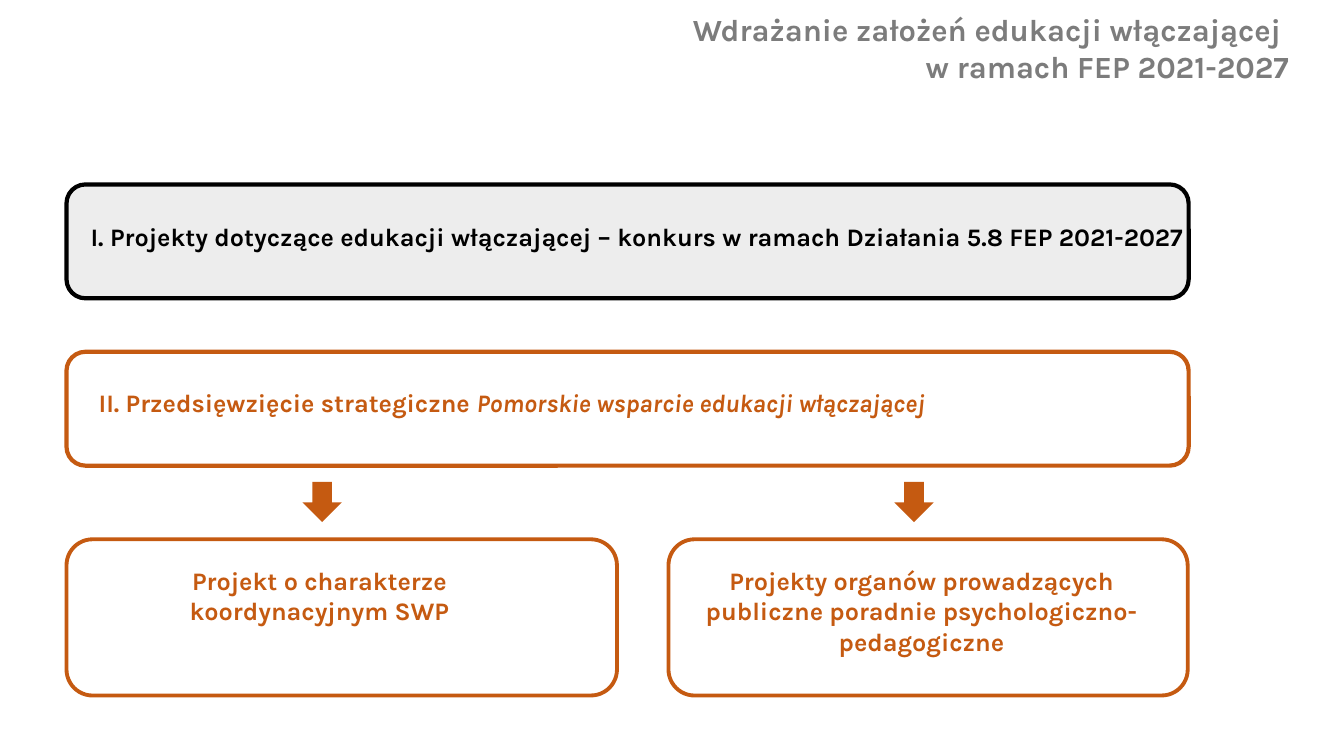
from pptx import Presentation
from pptx.dml.color import RGBColor
from pptx.enum.shapes import MSO_SHAPE
from pptx.enum.text import MSO_ANCHOR, PP_ALIGN
from pptx.util import Inches, Pt

ROUND, ARROW = MSO_SHAPE.ROUNDED_RECTANGLE, MSO_SHAPE.DOWN_ARROW
LEFT, CENTER, RIGHT = PP_ALIGN.LEFT, PP_ALIGN.CENTER, PP_ALIGN.RIGHT
TOP, MIDDLE = MSO_ANCHOR.TOP, MSO_ANCHOR.MIDDLE
ORANGE = RGBColor(0xC5, 0x5A, 0x11)
BLACK = RGBColor(0, 0, 0)
GRAY = RGBColor(0x7C, 0x7C, 0x7C)
PALE = RGBColor(0xED, 0xED, 0xED)
FONT = "Karla"

# Paragraphs are lists of (text, italic) runs.
TITLE = [[("Wdrażanie założeń edukacji włączającej \vw ramach FEP 2021-2027", False)]]
CALL = [[("I. Projekty dotyczące edukacji włączającej – konkurs "
          "w ramach Działania 5.8 FEP 2021-2027", False)]]
PLAN = [[("II. Przedsięwzięcie strategiczne ", False),
         ("Pomorskie wsparcie edukacji włączającej", True)]]
LEAD = [[("Projekt o charakterze ", False)], [("koordynacyjnym SWP ", False)]]
UNITS = [[("Projekty organów prowadzących publiczne poradnie "
           "psychologiczno-pedagogiczne", False)]]

EDGE, WIDE, BAR = 0.66, 11.13, 1.13
ROW, TALL = 5.35, 1.55
# top, fill, line colour, text, text left, text top
BARS = [(1.83, PALE, BLACK, CALL, 0.8, 2.15),
        (3.49, None, ORANGE, PLAN, 0.88, 3.79)]
# left, width, arrow left, text, text left, text width, text height
CARDS = [(EDGE, 5.46, 3, LEAD, 0.8, 4.8, 0.71),
         (6.63, 5.15, 8.87, UNITS, 6.88, 4.52, 1.01)]

deck = Presentation()
deck.slide_width, deck.slide_height = Inches(13.33), Inches(7.5)
slide = deck.slides.add_slide(deck.slide_layouts[6])


def add_form(kind, box, fill=None, line=None, width=0):
    form = slide.shapes.add_shape(kind, *map(Inches, box))
    form.shadow.inherit = False
    if fill is None:
        form.fill.background()
    else:
        form.fill.solid()
        form.fill.fore_color.rgb = fill
    if line is None:
        form.line.fill.background()
    else:
        form.line.color.rgb = line
        form.line.width = Pt(width)


def add_label(paras, box, color, align=LEFT, size=18, anchor=TOP):
    frame = slide.shapes.add_textbox(*map(Inches, box)).text_frame
    frame.word_wrap = True
    frame.vertical_anchor = anchor
    for i, parts in enumerate(paras):
        para = frame.add_paragraph() if i else frame.paragraphs[0]
        para.alignment = align
        for j, (text, slant) in enumerate(parts):
            if j:
                para.add_run().text = text
            else:
                para.text = text
            for run in para.runs[j:]:
                font = run.font
                font.name, font.size, font.bold = FONT, Pt(size), True
                font.italic = slant
                font.color.rgb = color


add_label(TITLE, (6.19, 0.13, 6.69, 0.68), GRAY, RIGHT, 22, MIDDLE)

for top, fill, color, text, text_x, text_y in BARS:
    add_form(ROUND, (EDGE, top, WIDE, BAR), fill, color, 3)
    add_label(text, (text_x, text_y, 11.65, 0.4), color)

for left, width, tip, text, text_x, text_w, text_h in CARDS:
    add_form(ROUND, (left, ROW, width, TALL), line=ORANGE, width=2.75)
    add_form(ARROW, (tip, 4.78, 0.39, 0.4), fill=ORANGE)
    add_label(text, (text_x, 5.56, text_w, text_h), ORANGE, CENTER)

deck.save("out.pptx")
